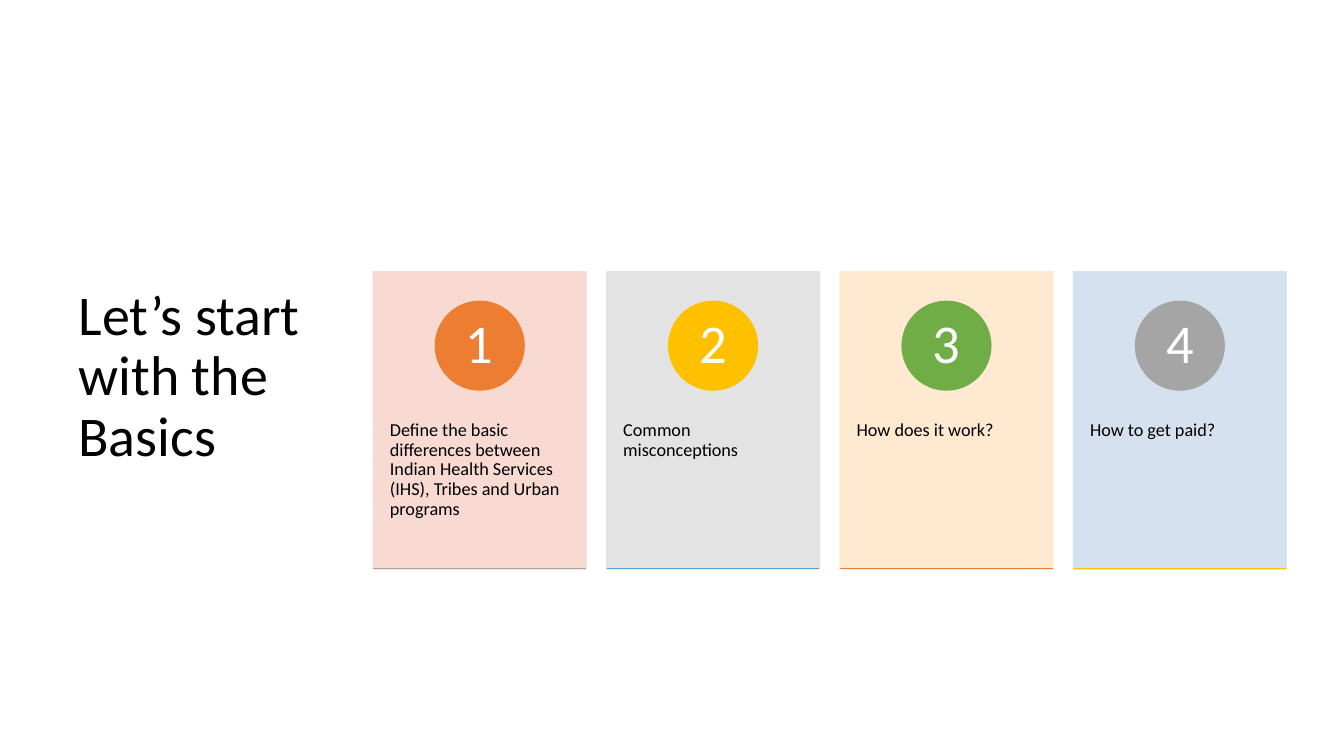
from lxml import etree
from pptx import Presentation
from pptx.dml.color import RGBColor
from pptx.enum.shapes import MSO_CONNECTOR, MSO_SHAPE
from pptx.enum.text import MSO_ANCHOR, PP_ALIGN
from pptx.oxml.ns import qn
from pptx.util import Pt

RECTANGLE, OVAL = MSO_SHAPE.RECTANGLE, MSO_SHAPE.OVAL
STRAIGHT = MSO_CONNECTOR.STRAIGHT
TOP, MIDDLE = MSO_ANCHOR.TOP, MSO_ANCHOR.MIDDLE
LEFT, CENTER = PP_ALIGN.LEFT, PP_ALIGN.CENTER

BLACK = RGBColor(0x00, 0x00, 0x00)
WHITE = RGBColor(0xFF, 0xFF, 0xFF)
PINK = RGBColor(0xF8, 0xD7, 0xCE)
PALE_GRAY = RGBColor(0xE1, 0xE1, 0xE1)
CREAM = RGBColor(0xFF, 0xE8, 0xCC)
PALE_BLUE = RGBColor(0xD2, 0xDE, 0xEF)
ORANGE = RGBColor(0xED, 0x7D, 0x31)
GOLD = RGBColor(0xFF, 0xC0, 0x00)
GREEN = RGBColor(0x70, 0xAD, 0x47)
GRAY = RGBColor(0xA5, 0xA5, 0xA5)
BLUE = RGBColor(0x5B, 0x9B, 0xD5)

FONT = "Calibri"
CARD_GAP = 14.8
CIRCLE_SIZE = 63.4
CARDS = [  # text, card colour, circle colour, base line colour
    ("Define the basic differences between Indian Health Services (IHS), "
     "Tribes and Urban programs", PINK, ORANGE, GRAY),
    ("Common misconceptions", PALE_GRAY, GOLD, BLUE),
    ("How does it work?", CREAM, GREEN, ORANGE),
    ("How to get paid?", PALE_BLUE, GRAY, GOLD),
]


def write_text(shape, text, size, color=BLACK, align=LEFT, anchor=TOP,
               insets=(7.2, 3.6, 7.2, 3.6)):
    """Fill a shape with one paragraph; insets are left, top, right, bottom."""
    frame = shape.text_frame
    frame.word_wrap = True
    frame.vertical_anchor = anchor
    (frame.margin_left, frame.margin_top,
     frame.margin_right, frame.margin_bottom) = map(Pt, insets)
    frame.text = text
    para = frame.paragraphs[0]
    para.alignment = align
    para.line_spacing = 0.9
    for span in para.runs:
        span.font.name = FONT
        span.font.size = Pt(size)
        span.font.color.rgb = color


def add_solid(page, kind, box, color, opacity=100):
    shape = page.shapes.add_shape(kind, *map(Pt, box))
    shape.shadow.inherit = False
    shape.fill.solid()
    shape.fill.fore_color.rgb = color
    shape.line.color.rgb = color
    shape.line.width = Pt(1)
    if opacity < 100:
        for color_node in shape._element.spPr.iter(qn("a:srgbClr")):
            alpha = etree.SubElement(color_node, qn("a:alpha"))
            alpha.set("val", str(opacity * 1000))
    return shape


def add_base_line(page, left, right, y, color):
    line = page.shapes.add_connector(STRAIGHT, Pt(left), Pt(y), Pt(right), Pt(y))
    line.line.color.rgb = color
    line.line.width = Pt(1)
    etree.SubElement(line._element.spPr, qn("a:effectLst"))


def add_title(page, box):
    title = page.shapes.add_textbox(*map(Pt, box))
    write_text(title, "Let’s start\vwith the \vBasics", 40, anchor=MIDDLE)


def add_card(page, box, number, text, card_color, circle_color, line_color):
    left, top, width, height = box
    card = add_solid(page, RECTANGLE, box, card_color, opacity=90)
    write_text(card, text, 13, insets=(11.8, 106.4, 11.8, 26))
    circle_box = (left + (width - CIRCLE_SIZE) / 2, top + 21,
                  CIRCLE_SIZE, CIRCLE_SIZE)
    circle = add_solid(page, OVAL, circle_box, circle_color)
    write_text(circle, str(number), 39, WHITE, CENTER, MIDDLE, (5, 1, 5, 1))
    add_base_line(page, left, left + width, top + height - 0.4, line_color)


def add_cards(page, box):
    """Share the box between equally wide cards."""
    left, top, width, height = box
    card_width = (width - CARD_GAP * (len(CARDS) - 1)) / len(CARDS)
    for index, card in enumerate(CARDS):
        card_left = left + index * (card_width + CARD_GAP)
        add_card(page, (card_left, top, card_width, height), index + 1, *card)


def main():
    deck = Presentation()
    deck.slide_width, deck.slide_height = Pt(960), Pt(540)
    page = deck.slides.add_slide(deck.slide_layouts[6])
    add_title(page, (49, 91.4, 208.8, 356.4))
    add_cards(page, (266.7, 194.2, 652, 212.2))
    deck.save("out.pptx")


if __name__ == "__main__":
    main()
